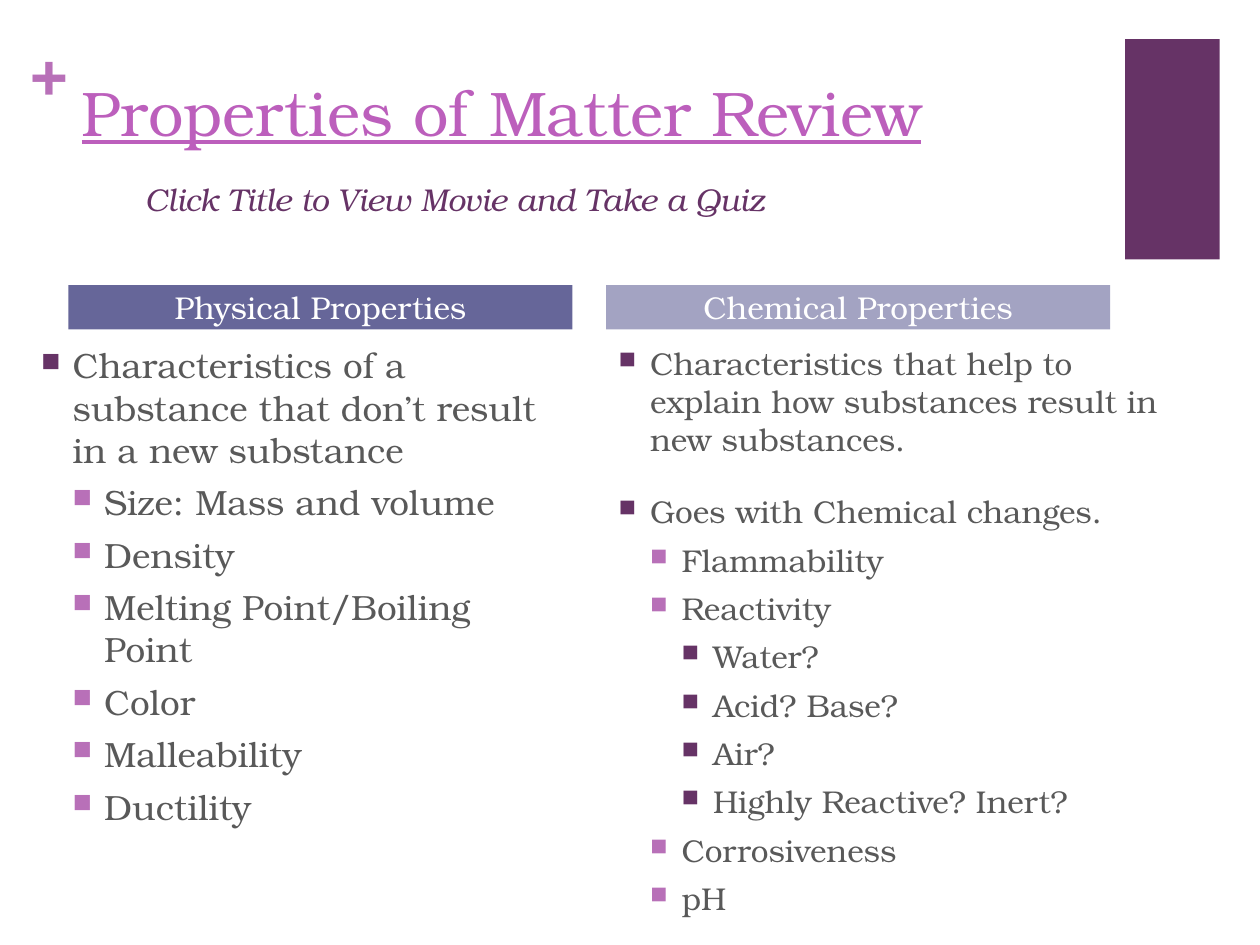
from lxml import etree
from pptx import Presentation
from pptx import util as u
from pptx.dml.color import RGBColor
from pptx.enum import shapes, text
from pptx.oxml.ns import qn

PLUM = RGBColor(0x66, 0x33, 0x66)
MAUVE = RGBColor(0xB8, 0x70, 0xB8)
PINK = RGBColor(0xBC, 0x5F, 0xBC)
INDIGO = RGBColor(0x66, 0x66, 0x99)
LILAC = RGBColor(0xA3, 0xA3, 0xC2)
GREY = RGBColor(0x59, 0x59, 0x59)
WHITE = RGBColor(0xFF, 0xFF, 0xFF)

PHYSICAL = [
    (0, "Characteristics of a substance that don’t result in a new substance"),
    (1, "Size: Mass and volume"),
    (1, "Density"),
    (1, "Melting Point/Boiling Point"),
    (1, "Color"),
    (1, "Malleability"),
    (1, "Ductility"),
]
CHEMICAL = [
    (0, "Characteristics that help to explain how substances result in new substances."),
    (0, "Goes with Chemical changes."),
    (1, "Flammability"),
    (1, "Reactivity"),
    (2, "Water?"),
    (2, "Acid? Base?"),
    (2, "Air?"),
    (2, "Highly Reactive? Inert?"),
    (1, "Corrosiveness"),
    (1, "pH"),
]


class Page:
    face = "TeX Gyre Bonum"
    step = u.Cm(0.635)

    def __init__(self, slide):
        self.slide = slide

    def style(self, run, size, color, bold=False, italic=False, under=False):
        font = run.font
        font.name, font.size = self.face, u.Pt(size)
        font.bold, font.italic, font.underline = bold, italic, under
        font.color.rgb = color

    def block(self, x, y, w, h, fill):
        box = self.slide.shapes.add_shape(
            shapes.MSO_SHAPE.RECTANGLE, u.Cm(x), u.Cm(y), u.Cm(w), u.Cm(h))
        box.shadow.inherit = False
        box.fill.solid()
        box.fill.fore_color.rgb = fill
        box.line.fill.background()
        return box

    def label(self, x, y, w, h, words, fill):
        frame = self.block(x, y, w, h, fill).text_frame
        frame.margin_top = frame.margin_bottom = 0
        frame.vertical_anchor = text.MSO_ANCHOR.MIDDLE
        frame.text = words
        para = frame.paragraphs[0]
        para.alignment = text.PP_ALIGN.CENTER
        self.style(para.runs[0], 18, WHITE)

    def frame(self, x, y, w, h):
        box = self.slide.shapes.add_textbox(u.Cm(x), u.Cm(y), u.Cm(w), u.Cm(h))
        box.text_frame.word_wrap = True
        return box.text_frame

    def plus(self, x, y, w, h):
        frame = self.frame(x, y, w, h)
        frame.margin_left = frame.margin_right = 0
        frame.margin_top = frame.margin_bottom = 0
        frame.text = "+"
        self.style(frame.paragraphs[0].runs[0], 36, MAUVE, bold=True)

    def title(self, x, y, w, h, head, sub):
        para = self.frame(x, y, w, h).paragraphs[0]
        para.text = head
        self.style(para.runs[0], 36, PINK, under=True)
        para.add_line_break()
        tab, note = para.add_run(), para.add_run()
        tab.text, note.text = "\t", sub
        self.style(tab, 36, PLUM)
        self.style(note, 18, PLUM, italic=True)

    def bullet(self, para, level):
        """Give the paragraph a hanging square whose colour follows its level."""
        props = para._p.get_or_add_pPr()
        props.set("marL", str(self.step * (level + 1)))
        props.set("indent", str(-self.step))
        color = etree.SubElement(props, qn("a:buClr"))
        tint = MAUVE if level == 1 else PLUM
        etree.SubElement(color, qn("a:srgbClr"), val=str(tint))
        etree.SubElement(props, qn("a:buSzPct"), val="75000")
        etree.SubElement(props, qn("a:buChar"), char="■")

    def points(self, x, y, w, h, items, size):
        frame = self.frame(x, y, w, h)
        frame.text = "\n".join(words for _, words in items)
        for para, (level, _) in zip(frame.paragraphs, items):
            para.level = level
            para.space_before = u.Pt(6 if level else 20)
            self.bullet(para, level)
            self.style(para.runs[0], size, GREY)


def main():
    deck = Presentation()
    deck.slide_width, deck.slide_height = u.Cm(25.4), u.Cm(19.05)
    page = Page(deck.slides.add_slide(deck.slide_layouts[6]))

    page.block(22.68, 0.79, 1.91, 4.44, PLUM)
    page.plus(0.61, 0.64, 0.74, 1.55)
    page.title(1.4, 1.35, 20.98, 3.1, "Properties of Matter Review",
               "Click Title to View Movie and Take a Quiz")
    page.points(0.58, 6.81, 10.95, 10.21, PHYSICAL, 20)
    page.points(12.22, 6.81, 12.07, 11.71, CHEMICAL, 18)
    page.label(1.38, 5.75, 10.16, 0.89, "Physical Properties", INDIGO)
    page.label(12.22, 5.75, 10.16, 0.89, "Chemical Properties", LILAC)

    deck.save("out.pptx")


if __name__ == "__main__":
    main()
